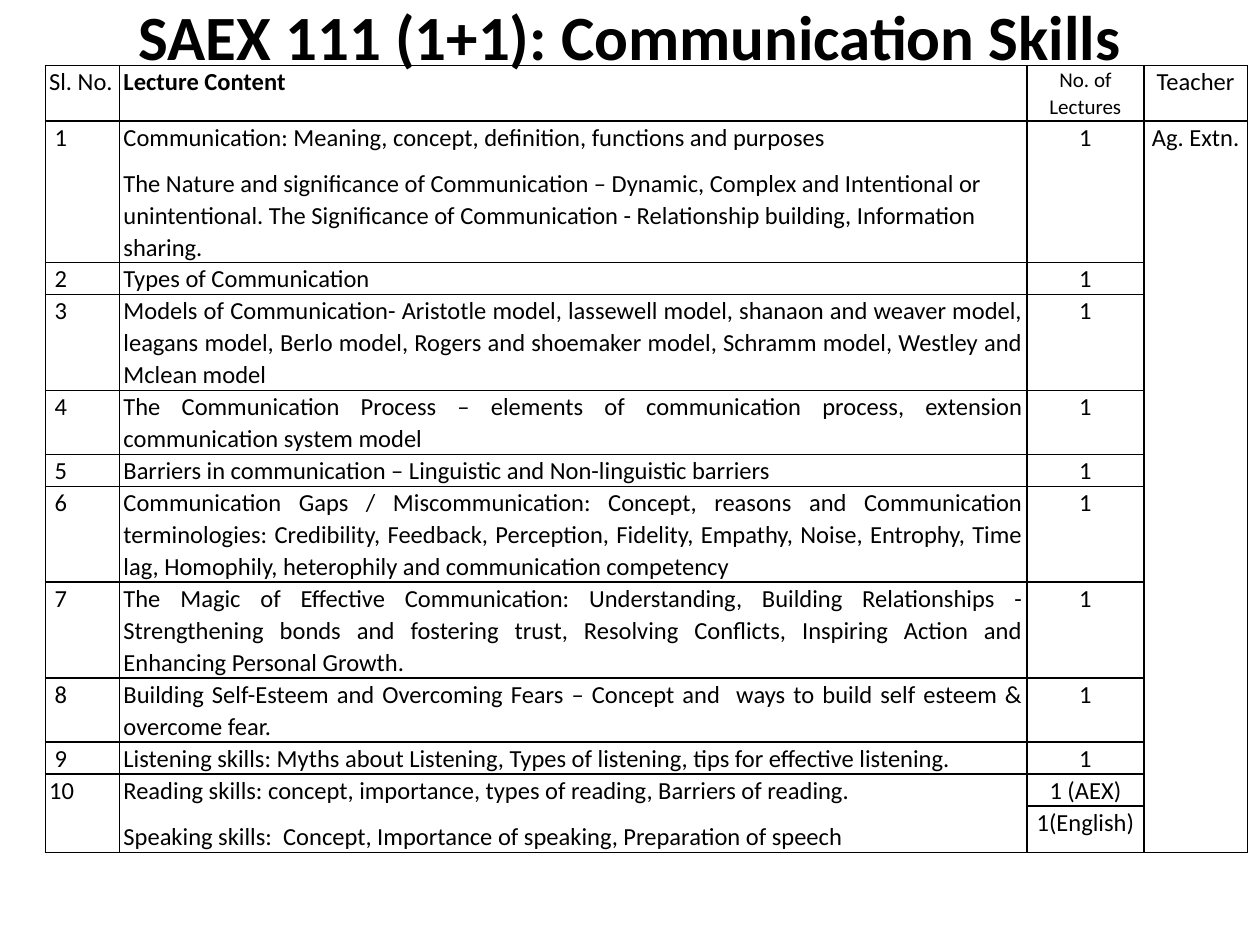
"""Build a lecture plan slide with a title and a course table."""
from lxml.etree import SubElement
from pptx import Presentation
from pptx.dml.color import RGBColor
from pptx.enum.text import MSO_ANCHOR, PP_ALIGN
from pptx.oxml.ns import qn
from pptx.util import Inches, Pt


def style(par, size, bold=False, color="000000"):
    for run in par.runs:
        run.font.name = "Calibri"
        run.font.size = Pt(size)
        run.font.bold = bold
        run.font.color.rgb = RGBColor.from_string(color)


def border(cell, color="000000", width=1):
    props = cell._tc.get_or_add_tcPr()
    for spot, side in enumerate(("a:lnL", "a:lnR", "a:lnT", "a:lnB")):
        line = SubElement(props, qn(side), w=str(Pt(width)))
        fill = SubElement(line, qn("a:solidFill"))
        SubElement(fill, qn("a:srgbClr"), val=color)
        props.insert(spot, line)


LEFT, MID, JUST = PP_ALIGN.LEFT, PP_ALIGN.CENTER, PP_ALIGN.JUSTIFY
widths = [0.59, 7.2, 0.93, 0.82]
heights = [0.44, 1.12, 0.25, 0.76, 0.51, 0.25, 0.76, 0.76, 0.51, 0.25, 0.25, 0.37]
heads = ["Sl. No.", "Lecture Content", "No. of Lectures", "Teacher"]
topics = [
    "Communication: Meaning, concept, definition, functions and purposes\n"
    "The Nature and significance of Communication – Dynamic, Complex and Intentional or "
    "unintentional. The Significance of Communication - Relationship building, "
    "Information sharing.",
    "Types of Communication",
    "Models of Communication- Aristotle model, lassewell model, shanaon and weaver model, "
    "leagans model, Berlo model, Rogers and shoemaker model, Schramm model, Westley and "
    "Mclean model",
    "The Communication Process – elements of communication process, extension "
    "communication system model",
    "Barriers in communication – Linguistic and Non-linguistic barriers",
    "Communication Gaps / Miscommunication: Concept, reasons and Communication "
    "terminologies: Credibility, Feedback, Perception, Fidelity, Empathy, Noise, "
    "Entrophy, Time lag, Homophily, heterophily and communication competency",
    "The Magic of Effective Communication: Understanding, Building Relationships - "
    "Strengthening bonds and fostering trust, Resolving Conflicts, Inspiring Action and "
    "Enhancing Personal Growth.",
    "Building Self-Esteem and Overcoming Fears – Concept and  ways to build self esteem & "
    "overcome fear.",
    "Listening skills: Myths about Listening, Types of listening, tips for effective "
    "listening.",
    "Reading skills: concept, importance, types of reading, Barriers of reading.\n"
    "Speaking skills:  Concept, Importance of speaking, Preparation of speech",
]
rows = [heads]
for num, topic in enumerate(topics, 1):
    count = "1 (AEX)" if num == 10 else "1"
    rows.append([f"{num}".rjust(2, " "), topic, count, ""])
rows.append(["", "", "1(English)", ""])
rows[1][3] = "Ag. Extn."

deck = Presentation()
deck.slide_width, deck.slide_height = Inches(10), Inches(7.5)
slide = deck.slides.add_slide(deck.slide_layouts[5])

title = slide.shapes.title
title.left, title.top = Inches(0.69), Inches(0.35)
title.width, title.height = Inches(8.62), Inches(0.48)
frame = title.text_frame
frame.text = "SAEX 111 (1+1): Communication Skills"
frame.vertical_anchor = MSO_ANCHOR.BOTTOM
frame.margin_top, frame.margin_bottom = 0, Inches(0.24)
head = frame.paragraphs[0]
head.alignment = MID
head.line_spacing = 0.9
style(head, 36, True)

table = slide.shapes.add_table(
    len(rows), len(widths), Inches(0.36), Inches(0.52),
    Inches(sum(widths)), Inches(sum(heights))).table
table.first_row = table.horz_banding = False
for col, width in zip(table.columns, widths):
    col.width = Inches(width)
for row, height in zip(table.rows, heights):
    row.height = Inches(height)

for r, row in enumerate(rows):
    for c, text in enumerate(row):
        cell = table.cell(r, c)
        cell.text = text
        cell.margin_left = cell.margin_right = Inches(0.03)
        cell.margin_top = cell.margin_bottom = 0
        cell.fill.background()
        border(cell)
        for par in cell.text_frame.paragraphs:
            par.alignment = MID if c > 1 else JUST if c == 1 and r > 2 else LEFT
            par.line_spacing = 1.07
            par.space_after = Pt(8 if c else 0)
            style(par, 12 if (r, c) == (0, 2) else 14, (r, c) == (0, 1))

table.cell(1, 3).merge(table.cell(11, 3))
for c in range(2):
    table.cell(10, c).merge(table.cell(11, c))

deck.save("out.pptx")
